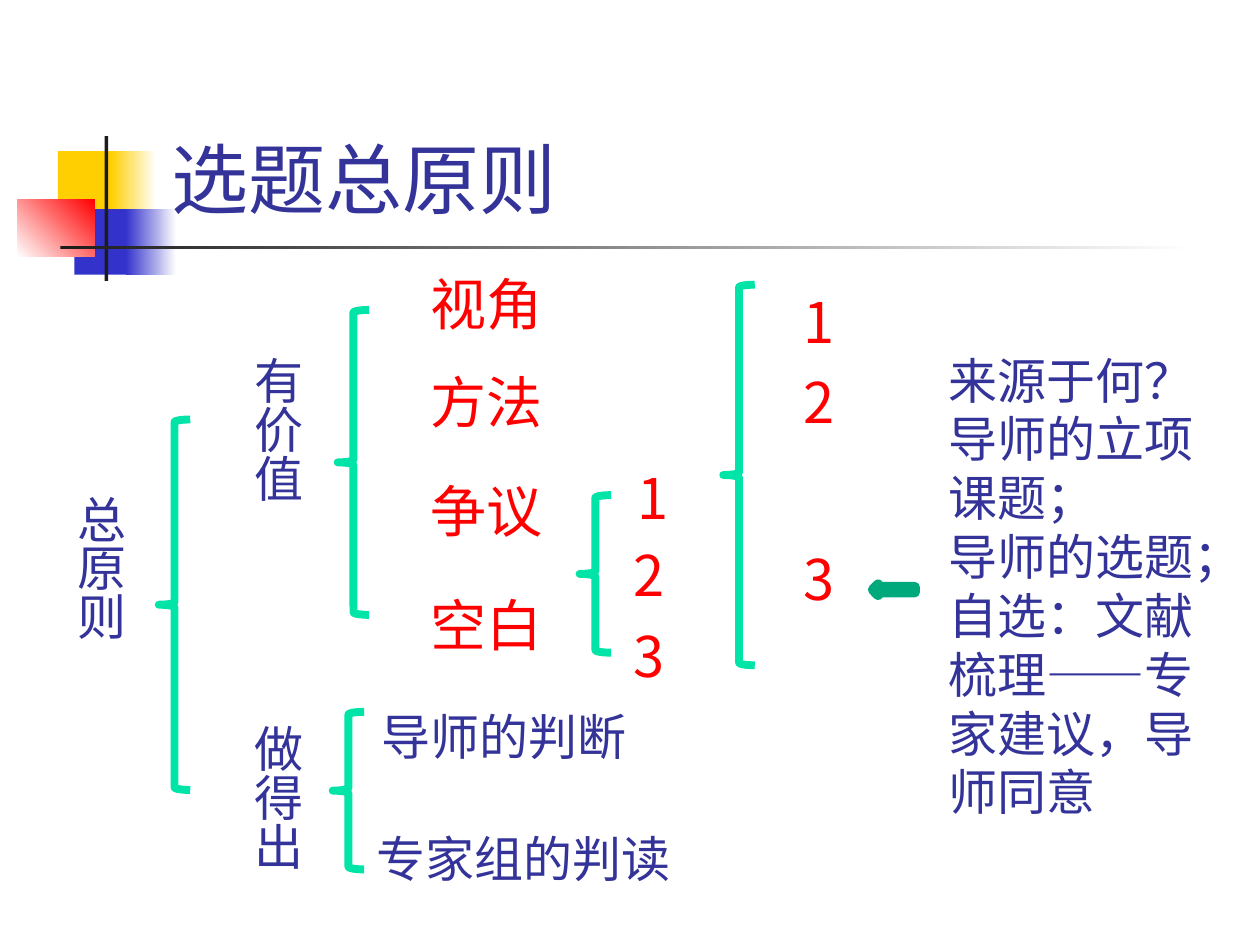
from pptx import Presentation
from pptx.dml.color import RGBColor as RGB
from pptx.enum.shapes import MSO_SHAPE as Kind
from pptx.enum.text import MSO_ANCHOR as Anchor
from pptx.oxml.ns import qn
from pptx.util import Inches, Pt
from lxml.etree import SubElement

FONT = "Noto Sans CJK SC"
NAVY = RGB(0x33, 0x33, 0x99)
RED = RGB(0xFF, 0x00, 0x00)
GOLD = RGB(0xFF, 0xCF, 0x01)
BLUE = RGB(0x33, 0x33, 0xCC)
INK = RGB(0x1C, 0x1C, 0x1C)
WHITE = RGB(0xFF, 0xFF, 0xFF)
MINT = RGB(0x00, 0xE4, 0xA8)
TEAL = RGB(0x00, 0xA9, 0x7C)

deck = Presentation()
deck.slide_width, deck.slide_height = Inches(10), Inches(7.5)
unit = deck.slide_width // 1000
slide = deck.slides.add_slide(deck.slide_layouts[6])


def draw(kind, *area):
    shape = slide.shapes.add_shape(kind, *(n * unit for n in area))
    shape.shadow.inherit = False
    return shape


def write(text, area, size, color, upright=False):
    box = slide.shapes.add_textbox(*(n * unit for n in area))
    frame = box.text_frame
    frame.text = text
    frame.word_wrap = True
    if upright:
        frame._txBody.bodyPr.set("vert", "eaVert")
    for para in frame.paragraphs:
        for run in para.runs:
            font = run.font
            font.name, font.size = FONT, Pt(size)
            font.color.rgb = color
            SubElement(font._element, qn("a:ea")).set("typeface", FONT)
    return frame


for area, start, end, angle in [
    ((46, 120, 48, 52), GOLD, None, 0),
    ((88, 120, 36, 52), GOLD, WHITE, 0),
    ((59, 166, 46, 52), BLUE, None, 0),
    ((100, 166, 40, 52), BLUE, WHITE, 0),
    ((14, 158, 61, 46), WHITE, RED, 45),
    ((83, 108, 3, 115), INK, None, 0),
    ((48, 195, 900, 3), INK, WHITE, 0),
]:
    block = draw(Kind.RECTANGLE, *area)
    block.line.fill.background()
    if end is None:
        block.fill.solid()
        block.fill.fore_color.rgb = start
    else:
        block.fill.gradient()
        block.fill.gradient_angle = angle
        for stop, color in zip(block.fill.gradient_stops, (start, end)):
            stop.color.rgb = color

title = write("选题总原则", (126, 23, 852, 160), 44, NAVY)
title.vertical_anchor = Anchor.BOTTOM

for text, left, top in [("总原则", 41, 383), ("有价值", 181, 273), ("做得出", 181, 565)]:
    write(text, (left, top, 67, 145), 28, NAVY, True)

for text, top in [("视角", 209), ("方法", 287), ("争议", 373), ("空白", 464)]:
    write(text, (332, top, 127, 64), 32, RED)

for text, left, top in [("导师的判断", 293, 556), ("专家组的判读", 289, 653)]:
    write(text, (left, top, 266, 57), 28, NAVY)

for spots in [
    [(496, 363), (493, 424), (493, 488)],
    [(628, 223), (628, 287), (628, 427)],
]:
    for rank, (left, top) in enumerate(spots, 1):
        write(str(rank), (left, top, 38, 64), 32, RED)

notes = ["来源于何？", "导师的立项课题；", "导师的选题；", "自选：文献梳理——专家建议，导师同意"]
write("\n".join(notes), (743, 273, 247, 387), 28, NAVY)

for left, top, height in [
    (126, 333, 294),
    (268, 246, 242),
    (264, 565, 125),
    (460, 393, 125),
    (574, 226, 302),
]:
    brace = draw(Kind.LEFT_BRACE, left, top, 25, height)
    brace.fill.background()
    brace.line.color.rgb = MINT
    brace.line.width = Pt(4.5)

arrow = draw(Kind.LEFT_ARROW, 693, 464, 33, 8)
arrow.fill.solid()
arrow.fill.fore_color.rgb = MINT
arrow.line.color.rgb = TEAL
arrow.line.width = Pt(6)

deck.save("out.pptx")
